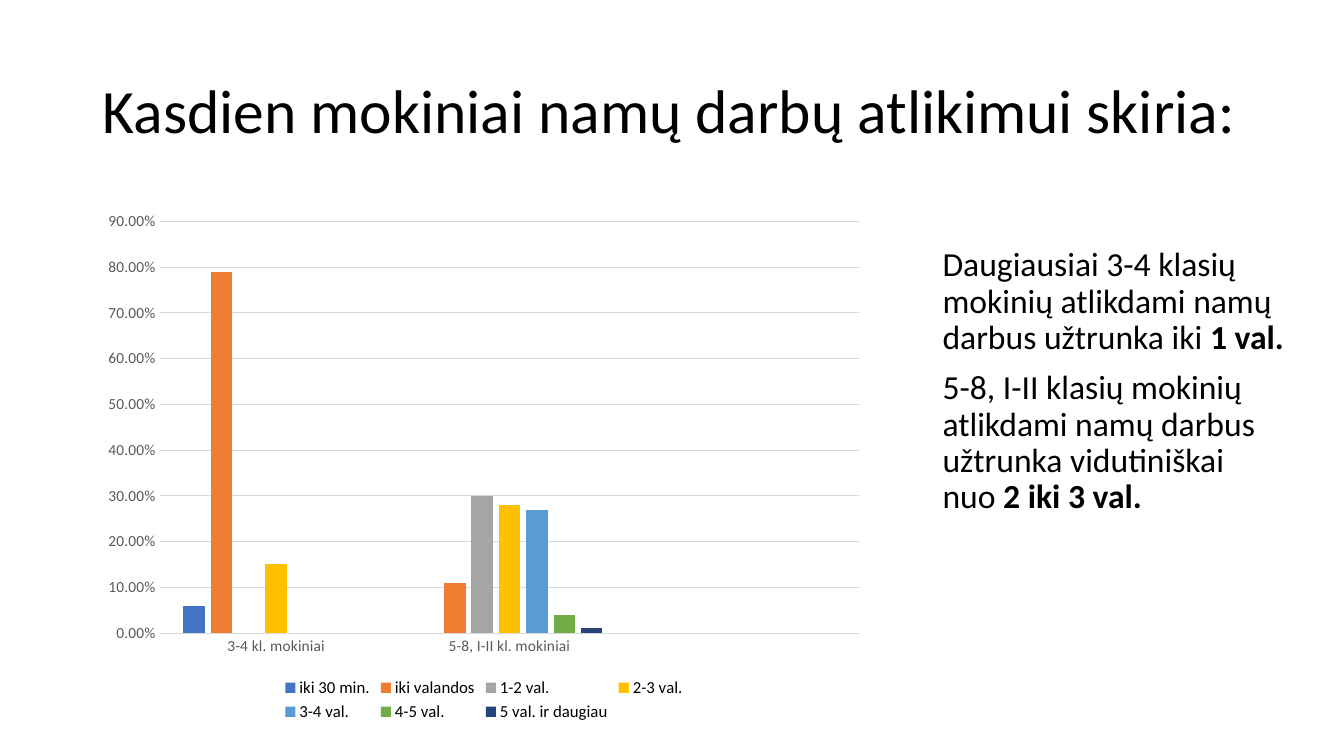
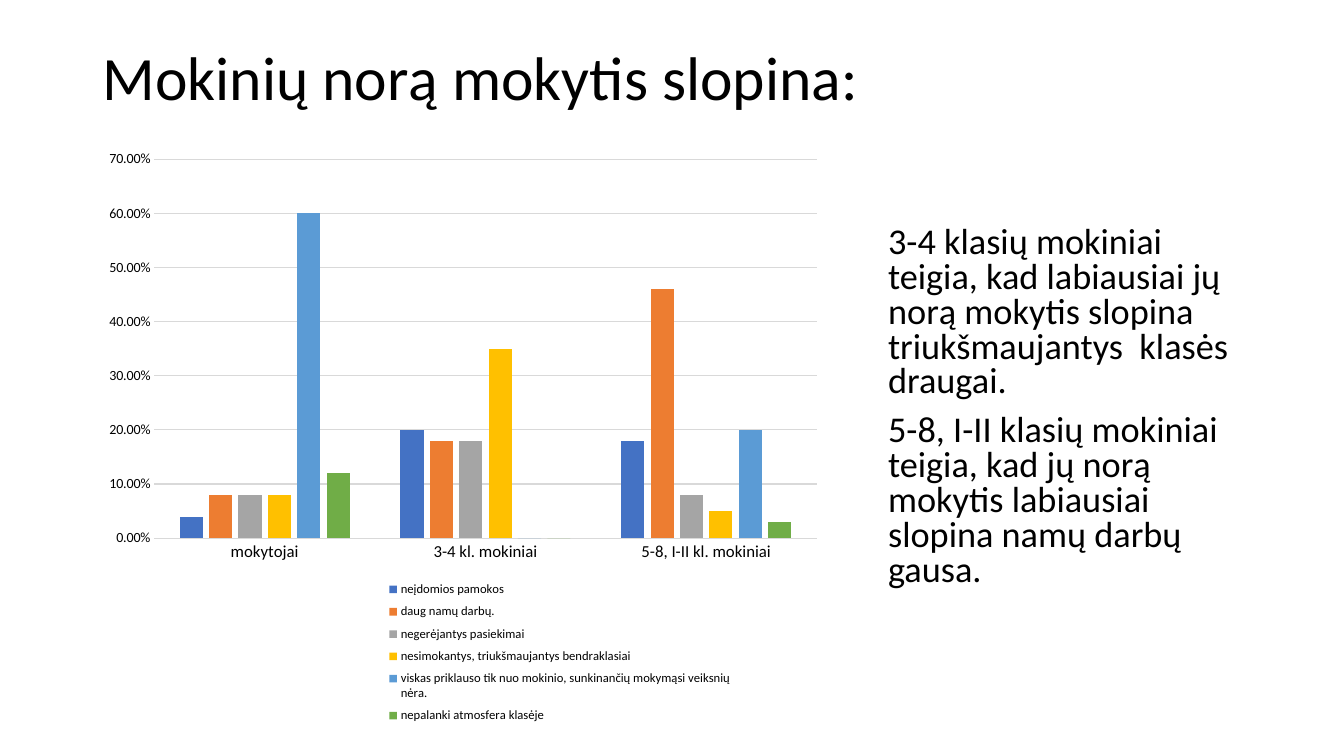
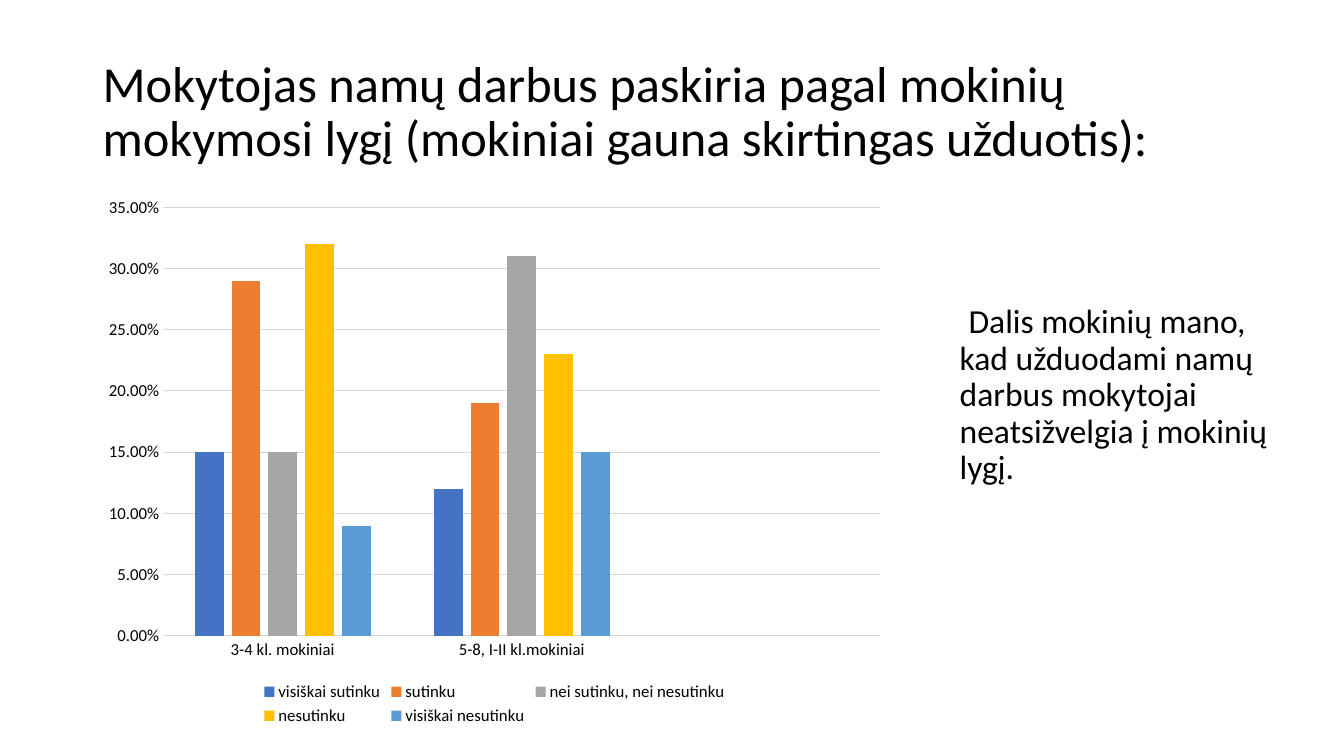
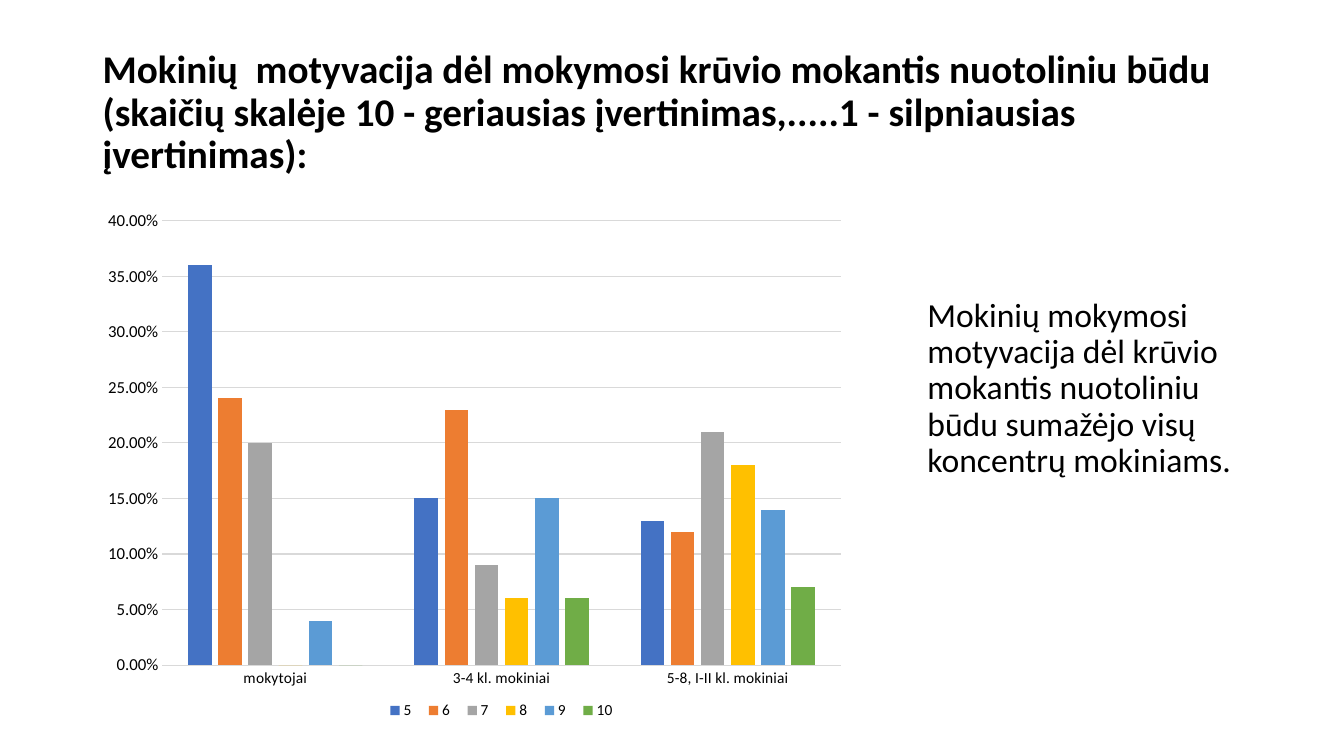
from dataclasses import dataclass

import pptx
import pptx.chart.data
import pptx.dml.color
import pptx.enum.chart
import pptx.enum.text
import pptx.oxml
import pptx.util
from pptx.util import Inches


@dataclass(frozen=True)
class Theme:
    font: str = "Calibri"
    text: str = "000000"
    muted: str = "595959"
    grid: str = "D9D9D9"
    series: tuple = ("4472C4", "ED7D31", "A5A5A5", "FFC000", "5B9BD5", "70AD47", "264478")
    title: float = 44
    long_title: float = 36
    longest_title: float = 28
    body: float = 24
    wide_body: float = 25.9
    lead: float = 28
    hairline: float = 0.75


THEME = Theme()
LEFT, TITLE_TOP, TITLE_WIDTH = 0.92, 0.4, 11.5


def style_font(font, size, color=THEME.text, bold=False):
    font.name = THEME.font
    font.size = pptx.util.Pt(size)
    font.bold = bold
    font.color.rgb = pptx.dml.color.RGBColor.from_string(color)


def add_text(slide, box, paragraphs, anchor, line_spacing, space_before=0):
    """Add a wrapped text box; each paragraph is a list of (text, size, bold) runs."""
    frame = slide.shapes.add_textbox(*map(Inches, box)).text_frame
    frame.word_wrap = True
    frame.vertical_anchor = anchor
    for index, runs in enumerate(paragraphs):
        paragraph = frame.add_paragraph() if index else frame.paragraphs[0]
        paragraph.line_spacing = line_spacing
        paragraph.space_before = pptx.util.Pt(space_before)
        for text, size, bold in runs:
            run = paragraph.add_run()
            run.text = text
            style_font(run.font, size, bold=bold)


# An empty category keeps the free third slot on the axis.
# Chart type sizes are (category axis, value axis, legend).
# Plot and legend boxes are inches from the chart's own corner.
SURVEY = [
    {
        "title": ("Kasdien mokiniai namų darbų atlikimui skiria:", THEME.title, False),
        "title_height": 1.45,
        "body_box": (9.25, 2.41, 3.59, 4.35),
        "body": [
            [("Daugiausiai 3-4 klasių mokinių atlikdami namų darbus užtrunka iki ", THEME.body, False),
             ("1 val.", THEME.body, True)],
            [("5-8, I-II klasių mokinių atlikdami namų darbus užtrunka vidutiniškai nuo ", THEME.body, False),
             ("2 iki 3 val.", THEME.body, True)],
        ],
        "chart_box": (LEFT, 2, 7.76, 5.2),
        "sizes": (11, 11, 12),
        "axis_color": THEME.muted,
        "scale": (0.9, 0.1),
        "categories": ["3-4 kl. mokiniai", "5-8, I-II kl. mokiniai", ""],
        "answers": {
            "iki 30 min.": (0.06, None, None),
            "iki valandos": (0.79, 0.11, None),
            "1-2 val.": (None, 0.3, None),
            "2-3 val.": (0.15, 0.28, None),
            "3-4 val.": (None, 0.27, None),
            "4-5 val.": (None, 0.04, None),
            "5 val. ir daugiau": (None, 0.01, None),
        },
    },
    {
        "title": ("Mokinių norą mokytis slopina:", THEME.title, False),
        "title_height": 0.79,
        "body_box": (8.71, 2.2, 3.71, 3.98),
        "body_spacing": 0.8,
        "body": [
            [("3-4 klasių mokiniai teigia, kad labiausiai jų norą mokytis slopina "
              "triukšmaujantys  klasės draugai.", THEME.wide_body, False)],
            [("5-8, I-II klasių mokiniai teigia, kad jų norą mokytis labiausiai slopina "
              "namų darbų gausa.", THEME.wide_body, False)],
        ],
        "chart_box": (LEFT, 1.43, 7.49, 5.89),
        "plot_box": (0.61, 0.15, 6.57, 3.76),
        "legend_box": (2.83, 4.27, 3.6, 1.55),
        "sizes": (12, 10, 9),
        "scale": (0.7, 0.1),
        "categories": ["mokytojai", "3-4 kl. mokiniai", "5-8, I-II kl. mokiniai"],
        "answers": {
            "neįdomios pamokos": (0.04, 0.2, 0.18),
            "daug namų darbų.": (0.08, 0.18, 0.46),
            "negerėjantys pasiekimai": (0.08, 0.18, 0.08),
            "nesimokantys, triukšmaujantys bendraklasiai": (0.08, 0.35, 0.05),
            "viskas priklauso tik nuo mokinio, sunkinančių mokymąsi veiksnių nėra.": (0.6, 0, 0.2),
            "nepalanki atmosfera klasėje": (0.12, 0, 0.03),
        },
    },
    {
        "title": ("Mokytojas namų darbus paskiria pagal mokinių mokymosi lygį "
                  "(mokiniai gauna skirtingas užduotis):", THEME.long_title, False),
        "title_height": 1.45,
        "body_box": (9.42, 2.92, 3.3, 3.32),
        "body": [
            [(" ", THEME.lead, False),
             ("Dalis mokinių mano, kad užduodami namų darbus mokytojai neatsižvelgia "
              "į mokinių lygį.", THEME.body, False)],
        ],
        "chart_box": (LEFT, 1.85, 7.97, 5.39),
        "sizes": (12, 12, 12),
        "scale": (0.35, 0.05),
        "categories": ["3-4 kl. mokiniai", "5-8, I-II kl.mokiniai", ""],
        "answers": {
            "visiškai sutinku": (0.15, 0.12, None),
            "sutinku": (0.29, 0.19, None),
            "nei sutinku, nei nesutinku": (0.15, 0.31, None),
            "nesutinku": (0.32, 0.23, None),
            "visiškai nesutinku": (0.09, 0.15, None),
        },
    },
    {
        "title": ("Mokinių  motyvacija dėl mokymosi krūvio mokantis nuotoliniu būdu (skaičių skalėje "
                  "10 - geriausias įvertinimas,.....1 - silpniausias įvertinimas):",
                  THEME.longest_title, True),
        "title_height": 1.45,
        "body_box": (9.1, 2.91, 3.32, 3.84),
        "body": [
            [("Mokinių mokymosi motyvacija dėl krūvio mokantis nuotoliniu būdu sumažėjo "
              "visų koncentrų mokiniams.", THEME.body, False)],
        ],
        "chart_box": (LEFT, 2, 7.57, 5.28),
        "plot_box": (0.69, 0.19, 6.73, 4.41),
        "legend_box": (2.83, 4.87, 2.45, 0.36),
        "sizes": (11, 12, 11),
        "scale": (0.4, 0.05),
        "categories": ["mokytojai", "3-4 kl. mokiniai", "5-8, I-II kl. mokiniai"],
        "answers": {
            "5": (0.36, 0.15, 0.13),
            "6": (0.24, 0.23, 0.12),
            "7": (0.2, 0.09, 0.21),
            "8": (0, 0.06, 0.18),
            "9": (0.04, 0.15, 0.14),
            "10": (0, 0.06, 0.07),
        },
    },
]

deck = pptx.Presentation()
deck.slide_width, deck.slide_height = Inches(13.33), Inches(7.5)
blank_layout = deck.slide_layouts[6]
grid_color = pptx.dml.color.RGBColor.from_string(THEME.grid)

for question in SURVEY:
    slide = deck.slides.add_slide(blank_layout)
    add_text(slide, (LEFT, TITLE_TOP, TITLE_WIDTH, question["title_height"]), [[question["title"]]],
             pptx.enum.text.MSO_ANCHOR.MIDDLE, 0.9)
    add_text(slide, question["body_box"], question["body"],
             pptx.enum.text.MSO_ANCHOR.TOP, question.get("body_spacing", 0.9), space_before=10)

    results = pptx.chart.data.CategoryChartData(number_format="0.00%")
    results.categories = question["categories"]
    for answer, shares in question["answers"].items():
        results.add_series(answer, shares)
    chart = slide.shapes.add_chart(pptx.enum.chart.XL_CHART_TYPE.COLUMN_CLUSTERED,
                                   *map(Inches, question["chart_box"]), results).chart
    category_size, value_size, legend_size = question["sizes"]
    style_font(chart.font, value_size)
    chart.has_title = False
    chart.has_legend = True
    chart.legend.position = pptx.enum.chart.XL_LEGEND_POSITION.BOTTOM
    chart.legend.include_in_layout = False
    style_font(chart.legend.font, legend_size)

    columns = chart.plots[0]
    columns.gap_width, columns.overlap = 219, -27
    columns.vary_by_categories = False
    for series, color in zip(columns.series, THEME.series):
        series.invert_if_negative = False
        series.format.fill.solid()
        series.format.fill.fore_color.rgb = pptx.dml.color.RGBColor.from_string(color)

    shares_axis = chart.value_axis
    for axis, size in ((chart.category_axis, category_size), (shares_axis, value_size)):
        axis.major_tick_mark = axis.minor_tick_mark = pptx.enum.chart.XL_TICK_MARK.NONE
        style_font(axis.tick_labels.font, size, question.get("axis_color", THEME.text))
    shares_axis.minimum_scale = 0
    shares_axis.maximum_scale, shares_axis.major_unit = question["scale"]
    shares_axis.tick_labels.number_format = "0.00%"
    shares_axis.tick_labels.number_format_is_linked = False
    shares_axis.format.line.fill.background()
    shares_axis.has_major_gridlines = True
    for line in (chart.category_axis.format.line, shares_axis.major_gridlines.format.line):
        line.color.rgb = grid_color
        line.width = pptx.util.Pt(THEME.hairline)

    # The schema puts c:layout first in the plot area and after c:legendPos in the legend.
    chart_width, chart_height = question["chart_box"][2:]
    for part, parent, position, target in (
            ("plot_box", chart.element.chart.plotArea, 0, '<c:layoutTarget val="inner"/>'),
            ("legend_box", chart.element.chart.legend, 1, "")):
        if part not in question:
            continue
        for old_layout in parent.findall(pptx.oxml.ns.qn("c:layout")):
            parent.remove(old_layout)
        extents = (chart_width, chart_height) * 2
        places = "".join(f'<c:{side} val="{length / extent:.4f}"/>'
                         for side, length, extent in zip("xywh", question[part], extents))
        parent.insert(position, pptx.oxml.parse_xml(
            f'<c:layout {pptx.oxml.ns.nsdecls("c")}><c:manualLayout>{target}'
            f'<c:xMode val="edge"/><c:yMode val="edge"/>{places}</c:manualLayout></c:layout>'))

deck.save("out.pptx")
